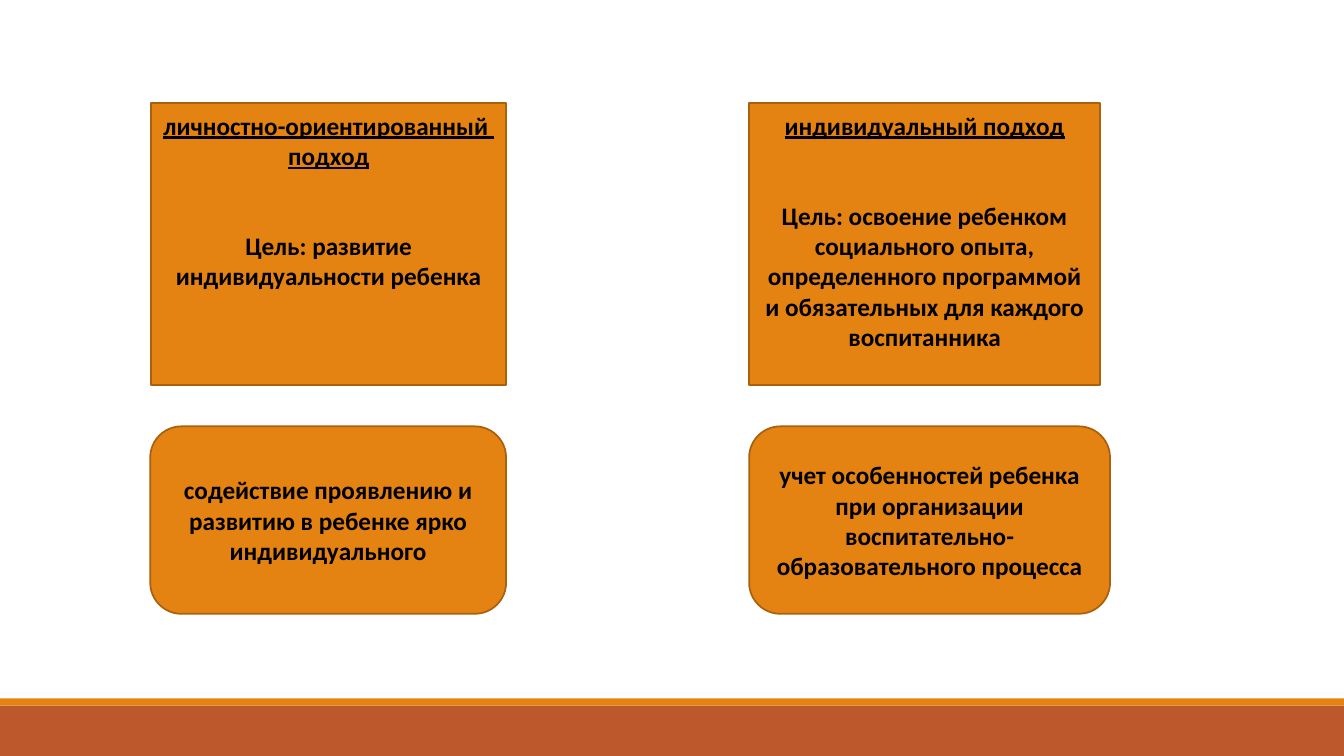
from pptx import Presentation
from pptx.dml.color import RGBColor
from pptx.enum.shapes import MSO_SHAPE
from pptx.enum.text import MSO_ANCHOR, PP_ALIGN
from pptx.util import Inches, Pt

RECT = MSO_SHAPE.RECTANGLE
ROUND = MSO_SHAPE.ROUNDED_RECTANGLE
TOP = MSO_ANCHOR.TOP
MIDDLE = MSO_ANCHOR.MIDDLE
CENTER = PP_ALIGN.CENTER

COLORS = {"orange": "E48312", "rust": "BD582C", "edge": "A9610D", "text": "000000"}
WIDE, HIGH = 13.33, 7.5


class Board:
    """Holds the style and the slide being drawn."""

    font = "Calibri"
    size = Pt(18)
    edge = Pt(1.25)
    gap = Pt(43)

    def __init__(self, slide):
        self.slide = slide

    def color(self, name):
        return RGBColor.from_string(COLORS[name])

    def shape(self, kind, box, fill):
        item = self.slide.shapes.add_shape(kind, *map(Inches, box))
        item.shadow.inherit = False
        item.fill.solid()
        item.fill.fore_color.rgb = self.color(fill)
        item.line.fill.background()
        return item

    def panel(self, kind, box, anchor):
        item = self.shape(kind, box, "orange")
        item.line.color.rgb = self.color("edge")
        item.line.width = self.edge
        frame = item.text_frame
        frame.word_wrap = True
        frame.vertical_anchor = anchor
        return frame

    def label(self, para, text, under=False):
        para.alignment = CENTER
        run = para.add_run()
        run.text = text
        font = run.font
        font.name, font.size = self.font, self.size
        font.bold, font.underline = True, under
        font.color.rgb = self.color("text")

    def goal(self, box, heads, text):
        """Draws a square panel: underlined heading lines, a gap, then the goal."""
        frame = self.panel(RECT, box, TOP)
        frame.margin_top = Inches(0.07)
        para = frame.paragraphs[0]
        for head in heads:
            self.label(para, head, under=True)
            para = frame.add_paragraph()
        para.space_before = self.gap
        self.label(para, text)

    def means(self, box, text):
        """Draws a rounded panel with one centred statement."""
        frame = self.panel(ROUND, box, MIDDLE)
        self.label(frame.paragraphs[0], text)


def main():
    deck = Presentation()
    deck.slide_width, deck.slide_height = Inches(WIDE), Inches(HIGH)
    board = Board(deck.slides.add_slide(deck.slide_layouts[6]))

    board.shape(RECT, (0, 7, WIDE, 0.5), "rust")
    board.shape(RECT, (0, 6.93, WIDE, 0.07), "orange")

    board.goal((1.5, 1.02, 3.52, 2.8),
               ["личностно-ориентированный ", "подход"],
               "Цель: развитие индивидуальности ребенка")
    board.goal((7.43, 1.02, 3.48, 2.8),
               ["индивидуальный подход"],
               "Цель: освоение ребенком социального опыта, определенного "
               "программой и обязательных для каждого воспитанника")
    board.means((1.49, 4.23, 3.53, 1.86),
                "содействие проявлению и развитию в ребенке ярко индивидуального")
    board.means((7.43, 4.23, 3.58, 1.86),
                "учет особенностей ребенка при организации "
                "воспитательно-образовательного процесса")
    deck.save("out.pptx")


if __name__ == "__main__":
    main()
